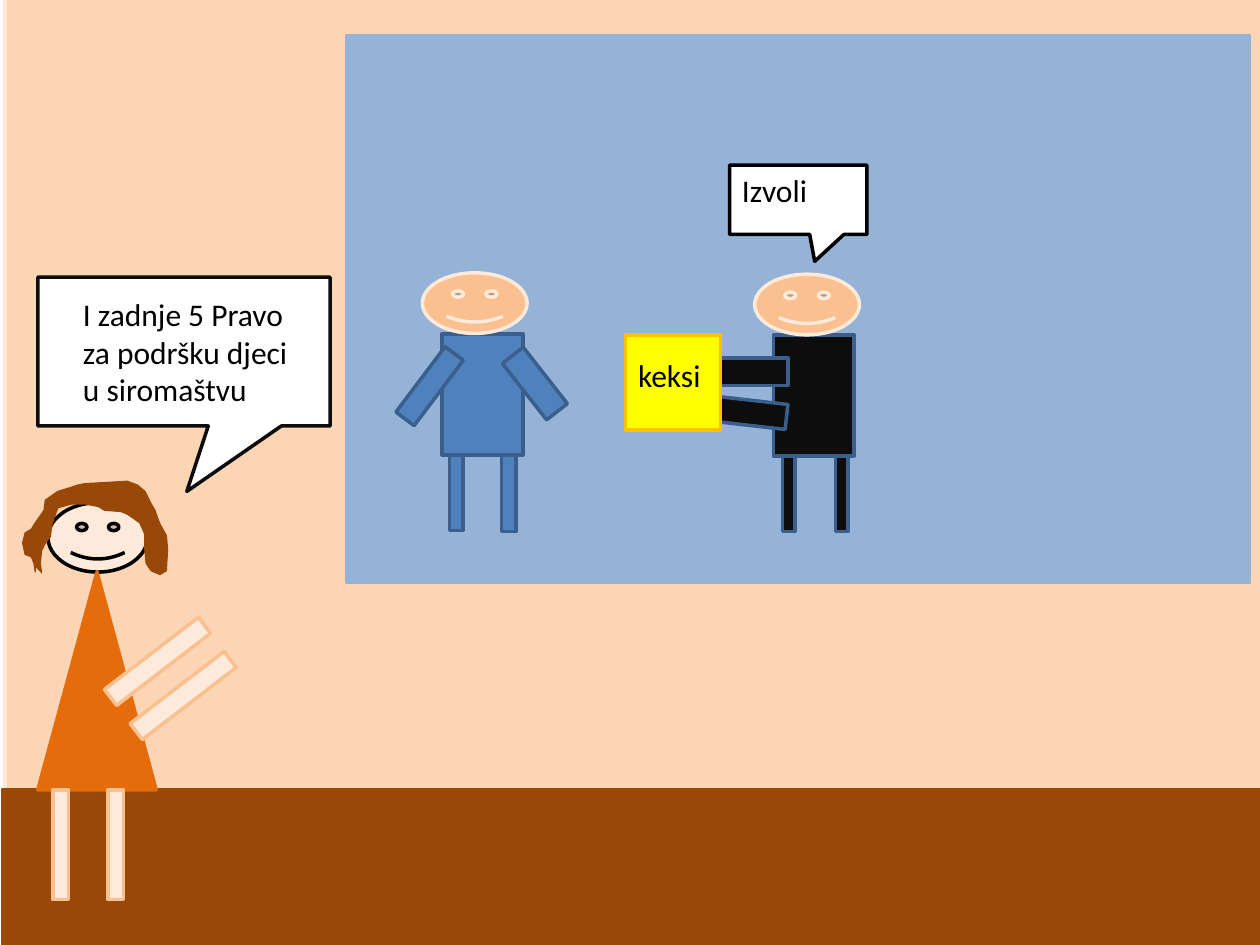
from pptx import Presentation
from pptx.dml.color import RGBColor
from pptx.enum.shapes import MSO_SHAPE
from pptx.enum.text import MSO_AUTO_SIZE, PP_ALIGN
from pptx.util import Pt

RECT = MSO_SHAPE.RECTANGLE
SMILEY = MSO_SHAPE.SMILEY_FACE
TRIANGLE = MSO_SHAPE.ISOSCELES_TRIANGLE
CALLOUT = MSO_SHAPE.RECTANGULAR_CALLOUT
FIT_TEXT = MSO_AUTO_SIZE.SHAPE_TO_FIT_TEXT
LEFT = PP_ALIGN.LEFT

WALL = RGBColor(0xFC, 0xD5, 0xB5)
SKIN = RGBColor(0xFD, 0xEA, 0xDA)
TAN = RGBColor(0xFA, 0xC0, 0x90)
BROWN = RGBColor(0x98, 0x48, 0x07)
ORANGE = RGBColor(0xE4, 0x6C, 0x0A)
BOARD = RGBColor(0x95, 0xB3, 0xD7)
BLUE = RGBColor(0x4F, 0x81, 0xBD)
NAVY = RGBColor(0x3A, 0x5F, 0x8C)
NEAR_BLACK = RGBColor(0x0D, 0x0D, 0x0D)
BLACK = RGBColor(0x00, 0x00, 0x00)
WHITE = RGBColor(0xFF, 0xFF, 0xFF)
YELLOW = RGBColor(0xFF, 0xFF, 0x00)
GOLD = RGBColor(0xFF, 0xC0, 0x00)


def add_part(shapes, preset, box, fill, line, rotation=0):
    part = shapes.add_shape(preset, *[Pt(length) for length in box])
    part.shadow.inherit = False
    part.fill.solid()
    part.fill.fore_color.rgb = fill
    part.line.color.rgb = line
    part.line.width = Pt(2)
    part.rotation = rotation
    return part


def add_words(shapes, box, words):
    frame = shapes.add_textbox(*[Pt(length) for length in box]).text_frame
    frame.word_wrap = True
    frame.auto_size = FIT_TEXT
    paragraph = frame.paragraphs[0]
    paragraph.alignment = LEFT
    run = paragraph.add_run()
    run.text = words
    run.font.name = "Calibri"
    run.font.size = Pt(18)
    run.font.color.rgb = BLACK


prs = Presentation()
prs.slide_width = Pt(720)
prs.slide_height = Pt(540)
slide = prs.slides.add_slide(prs.slide_layouts[6])

# Wall and floor
add_part(slide.shapes, RECT, (2.9, -1.4, 720, 540), WALL, SKIN)
add_part(slide.shapes, RECT, (1.4, 451.4, 720, 88.6), BROWN, BROWN)

# Teacher: head, dress, arms, legs
teacher = slide.shapes.add_group_shape().shapes
add_part(teacher, SMILEY, (27.4, 287.3, 56.9, 39.6), SKIN, BLACK)
add_part(teacher, TRIANGLE, (21.6, 326.9, 67.7, 124.5), ORANGE, ORANGE)
for arm_left, arm_top in ((56.2, 372.2), (70.9, 391.7)):
    add_part(teacher, RECT, (arm_left, arm_top, 67.7, 11.5), SKIN, TAN, 322.5)
for leg_left in (30.2, 61.6):
    add_part(teacher, RECT, (leg_left, 451.4, 9, 62.6), SKIN, TAN)

# Teacher's hair, in hundredths of an inch
hair_points = [
    (33, 455), (32, 447), (33, 437), (36, 431), (40, 426), (41, 417),
    (44, 408), (46, 403), (57, 400), (68, 400), (78, 402), (83, 405),
    (96, 406), (101, 408), (111, 415), (115, 424), (115, 436), (116, 447),
    (120, 453), (127, 456), (132, 453), (133, 436), (132, 425), (127, 416),
    (125, 411), (123, 405), (120, 400), (115, 390), (109, 385), (101, 382),
    (84, 383), (67, 384), (62, 385), (56, 387), (46, 390), (36, 397),
    (35, 405), (28, 415), (25, 420), (20, 423), (18, 431), (20, 440),
    (25, 442), (27, 447), (28, 454), (28, 450),
]
outline = teacher.build_freeform(*hair_points[0], scale=Pt(0.72))
outline.add_line_segments(hair_points[1:], close=False)
hair = outline.convert_to_shape()
hair.shadow.inherit = False
hair.fill.solid()
hair.fill.fore_color.rgb = BROWN
hair.line.color.rgb = BROWN
hair.line.width = Pt(0.75)

# Teacher's speech
speech = slide.shapes.add_group_shape().shapes
bubble = add_part(speech, CALLOUT, (21.6, 158.4, 167, 85), WHITE, NEAR_BLACK)
bubble.adjustments[0] = 0.01
bubble.adjustments[1] = 0.94
add_words(speech, (40.3, 164.9, 137.5, 72.7),
          "I zadnje 5 Pravo za podršku djeci u siromaštvu")

# Board
board = slide.shapes.add_group_shape().shapes
add_part(board, RECT, (198, 20.6, 516.2, 312), BOARD, BOARD)

# Child in blue and child in black: body, legs, arms, head
children = [
    (BLUE, (252.7, 190.8, 46.1, 69.1),
     [(286.6, 259.9, 8.3, 44), (257, 259.9, 7.5, 43.2)],
     [((239, 197.3, 13, 46.8), 37), ((298.1, 198.7, 15.1, 41), 321.9)],
     (241.4, 155.9, 59.8, 34.6)),
    (NEAR_BLACK, (442.1, 191.5, 46.1, 69.1),
     [(477.4, 260.6, 7.2, 43.2), (447.1, 260.6, 7.2, 43.2)],
     [((397.4, 204.5, 52.9, 15.8), 0), ((417.6, 210.6, 14.4, 49.7), 276.5)],
     (431.3, 156.7, 59.8, 34.6)),
]
for clothes, body, legs, arms, head in children:
    add_part(board, RECT, body, clothes, NAVY)
    for leg in legs:
        add_part(board, RECT, leg, clothes, NAVY)
    for arm, turn in arms:
        add_part(board, RECT, arm, clothes, NAVY, turn)
    add_part(board, SMILEY, head, TAN, SKIN)

# Box of biscuits
add_part(board, RECT, (357.5, 191.5, 54.3, 54.3), YELLOW, GOLD)
add_words(board, (357.5, 199.8, 73.4, 29.1), "keksi")

# Child's speech
offer = slide.shapes.add_group_shape().shapes
bubble = add_part(offer, CALLOUT, (416.9, 94.3, 78.5, 39.6), WHITE, BLACK)
bubble.adjustments[0] = 0.12
bubble.adjustments[1] = 0.89
add_words(offer, (416.9, 94.3, 78.5, 29.1), "Izvoli")

prs.save("out.pptx")
